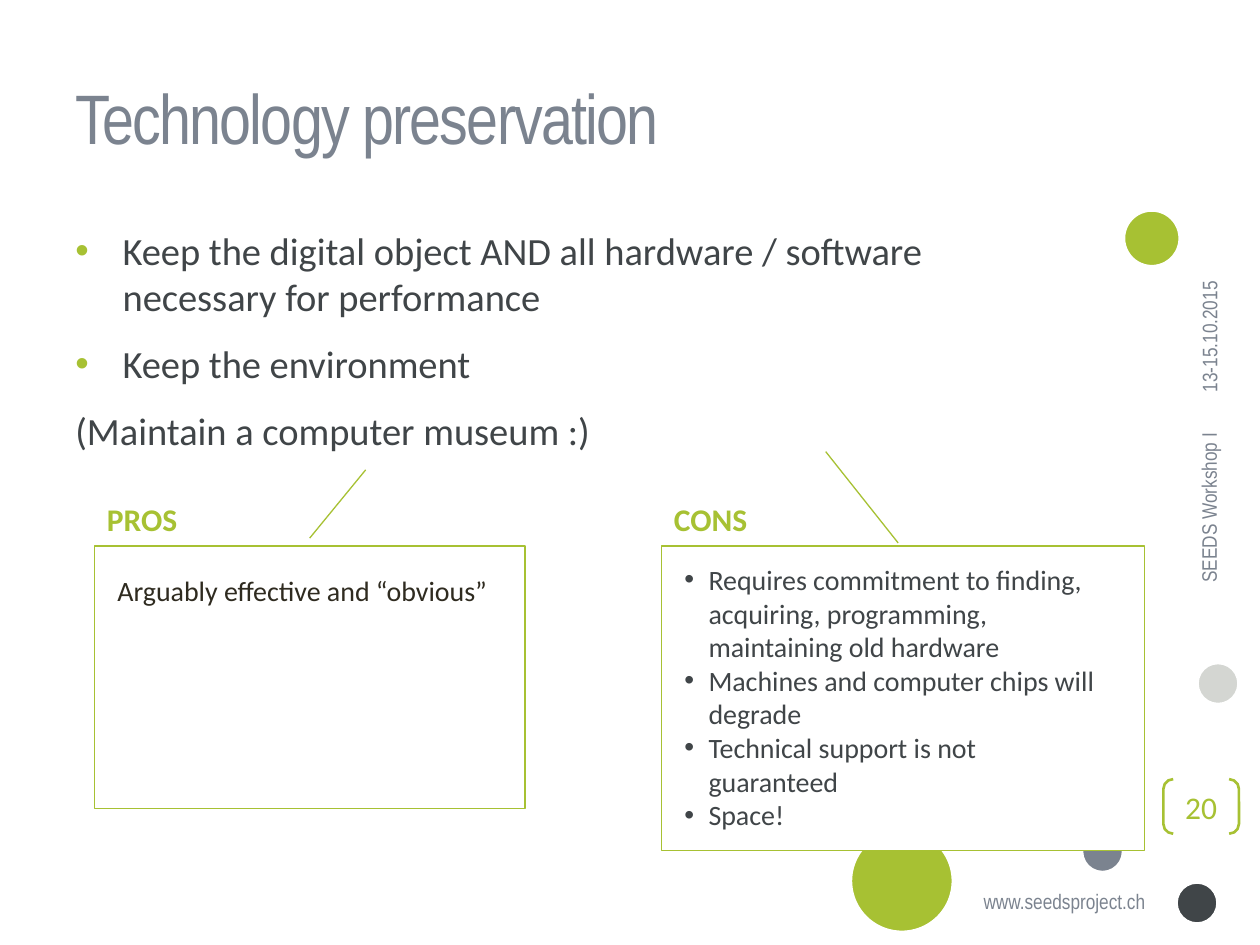
from lxml.etree import SubElement
from pptx import Presentation
from pptx.dml.color import RGBColor
from pptx.enum.shapes import MSO_SHAPE as Shape
from pptx.enum.text import MSO_ANCHOR as Anchor, PP_ALIGN as Align
from pptx.oxml.ns import qn
from pptx.util import Pt

PX = 7620  # 120 px to the inch
GREEN = RGBColor(0xA7, 0xC1, 0x33)
DARK = RGBColor(0x40, 0x45, 0x48)
SLATE = RGBColor(0x7B, 0x83, 0x8F)
SILVER = RGBColor(0xD4, 0xD6, 0xD2)
BROWN = RGBColor(0x2F, 0x2B, 0x20)
WHITE = RGBColor(0xFF, 0xFF, 0xFF)
NARROW, BODY = "Arial Narrow", "Calibri"

deck = Presentation()
deck.slide_width, deck.slide_height = 1200 * PX, 900 * PX
page = deck.slides.add_slide(deck.slide_layouts[6])


def add_shape(kind, bounds, fill, line, width):
    shape = page.shapes.add_shape(kind, *(n * PX for n in bounds))
    shape.shadow.inherit = False
    if fill is None:
        shape.fill.background()
    else:
        shape.fill.solid()
        shape.fill.fore_color.rgb = fill
    shape.line.color.rgb = line
    shape.line.width = Pt(width)
    return shape


def add_text(bounds, lines, size, font, color, wrap=True, bullets=0, indent=0,
             bullet_color=None, gap=0, bold=None, anchor=Anchor.TOP):
    """Add a text box whose first `bullets` paragraphs hang by `indent` px."""
    box = page.shapes.add_textbox(*(n * PX for n in bounds))
    frame = box.text_frame
    frame.word_wrap = wrap
    frame.vertical_anchor = anchor
    for index, line in enumerate(lines):
        para = frame.paragraphs[0] if index == 0 else frame.add_paragraph()
        para.text = line
        if index and gap:
            para.space_before = Pt(gap)
        if index < bullets:
            props = para._p.get_or_add_pPr()
            props.set("marL", str(indent * PX))
            props.set("indent", str(-indent * PX))
            if bullet_color is not None:
                tint = SubElement(props, qn("a:buClr"))
                SubElement(tint, qn("a:srgbClr")).set("val", str(bullet_color))
            SubElement(props, qn("a:buFont")).set("typeface", "Arial")
            SubElement(props, qn("a:buChar")).set("char", "•")
        para.font.size = Pt(size)
        para.font.name = font
        para.font.color.rgb = color
        para.font.bold = bold
    return box


# Decorative dots
for left, top, diameter, color in (
    (810, 790, 98, GREEN),
    (1070, 200, 54, GREEN),
    (1120, 840, 40, DARK),
    (1140, 631, 40, SILVER),
    (1030, 791, 40, SLATE),
):
    add_shape(Shape.OVAL, (left, top, diameter, diameter), color, WHITE, 2)

# Footer, page number and sideways labels
add_text((925, 840, 185, 36), ["www.seedsproject.ch"], 12, NARROW, SLATE, wrap=False)

number = add_shape(Shape.DOUBLE_BRACKET, (1108, 742, 72, 52), None, GREEN, 1.5)
number.adjustments[0] = 0.18
frame = number.text_frame
frame.margin_left = frame.margin_right = frame.margin_top = frame.margin_bottom = 0
frame.vertical_anchor = Anchor.MIDDLE
para = frame.paragraphs[0]
para.text = "20"
para.alignment = Align.CENTER
para.font.size = Pt(18)
para.font.name = BODY
para.font.color.rgb = GREEN

for bounds, label, align in (
    ((1046, 484, 210, 43), "SEEDS Workshop I", Align.RIGHT),
    ((1074, 288, 155, 40), "13-15.10.2015", Align.LEFT),
):
    box = add_text(bounds, [label], 12, NARROW, SLATE, anchor=Anchor.MIDDLE)
    box.rotation = 270
    box.text_frame.paragraphs[0].alignment = align

# Title and main points
title = add_text((60, 36, 960, 150), ["Technology preservation"], 40, NARROW, SLATE,
                 anchor=Anchor.MIDDLE)
span = title.text_frame.paragraphs[0].runs[0]
span._r.get_or_add_rPr().set("spc", "-100")

add_text((60, 210, 960, 630), [
    "Keep the digital object AND all hardware / software necessary for performance",
    "Keep the environment",
    "(Maintain a computer museum :)",
], 22, BODY, DARK, bullets=2, indent=45, bullet_color=GREEN, gap=12)

# Pros and cons
pros = ["Arguably effective and “obvious”"]
cons = [
    "Requires commitment to finding, acquiring, programming, maintaining old hardware",
    "Machines and computer chips will degrade",
    "Technical support is not guaranteed",
    "Space!",
]
for frame_bounds, pointer, text_bounds, lines, color, bullets in (
    ((90, 520, 410, 250), (-0.03, 0.5, -0.29, 0.63), (100, 540, 390, 44), pros, BROWN, 0),
    ((630, 520, 460, 290), (-0.01, 0.49, -0.31, 0.34), (640, 530, 430, 367), cons, DARK, 4),
):
    callout = add_shape(Shape.LINE_CALLOUT_1, frame_bounds, WHITE, GREEN, 0.75)
    for index, value in enumerate(pointer):
        callout.adjustments[index] = value
    add_text(text_bounds, lines, 16, BODY, color, bullets=bullets, indent=23)

for left, heading in ((90, "PROS"), (630, "CONS")):
    add_text((left, 470, 94, 48), [heading], 18, BODY, GREEN, wrap=False, bold=True)

deck.save("out.pptx")
